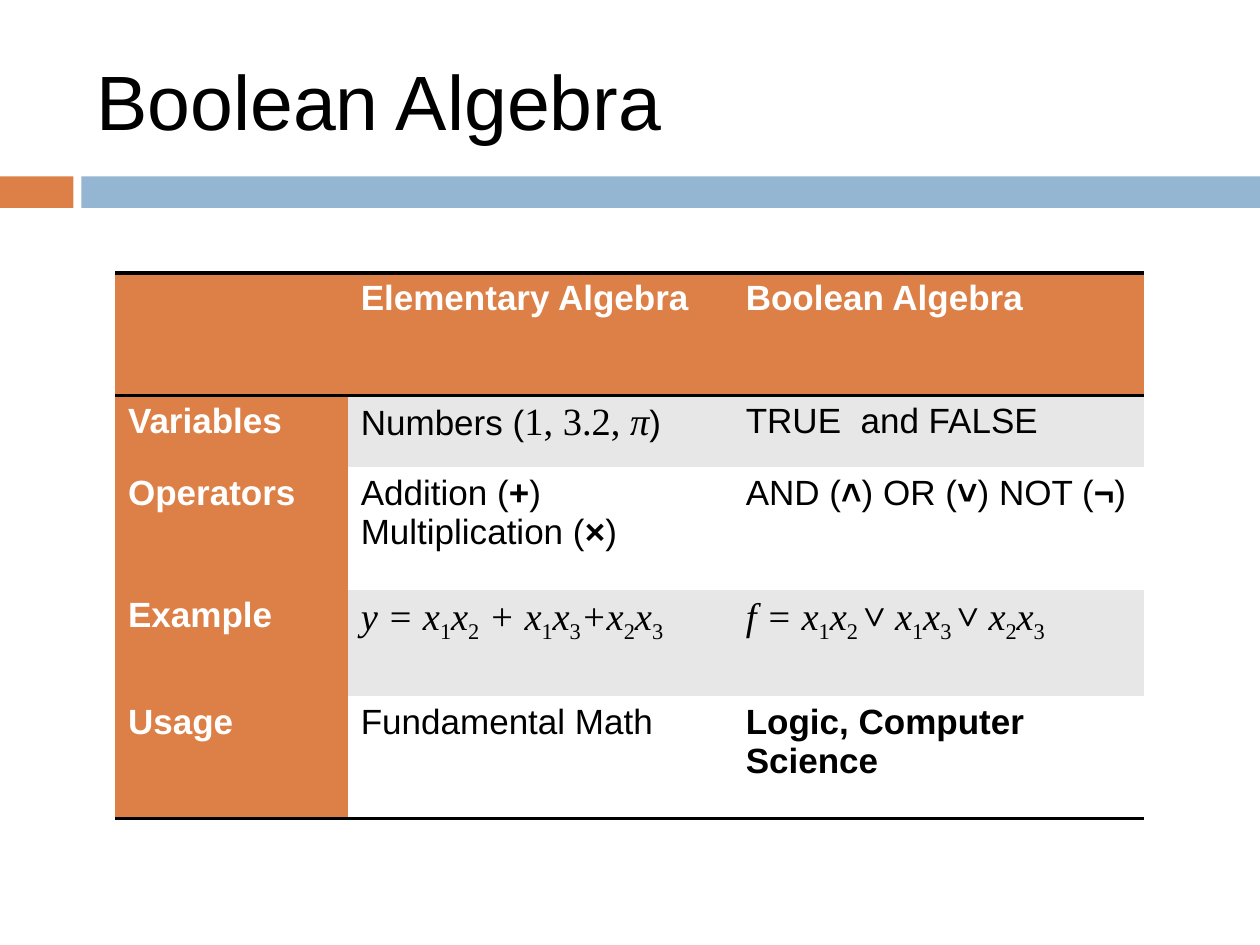
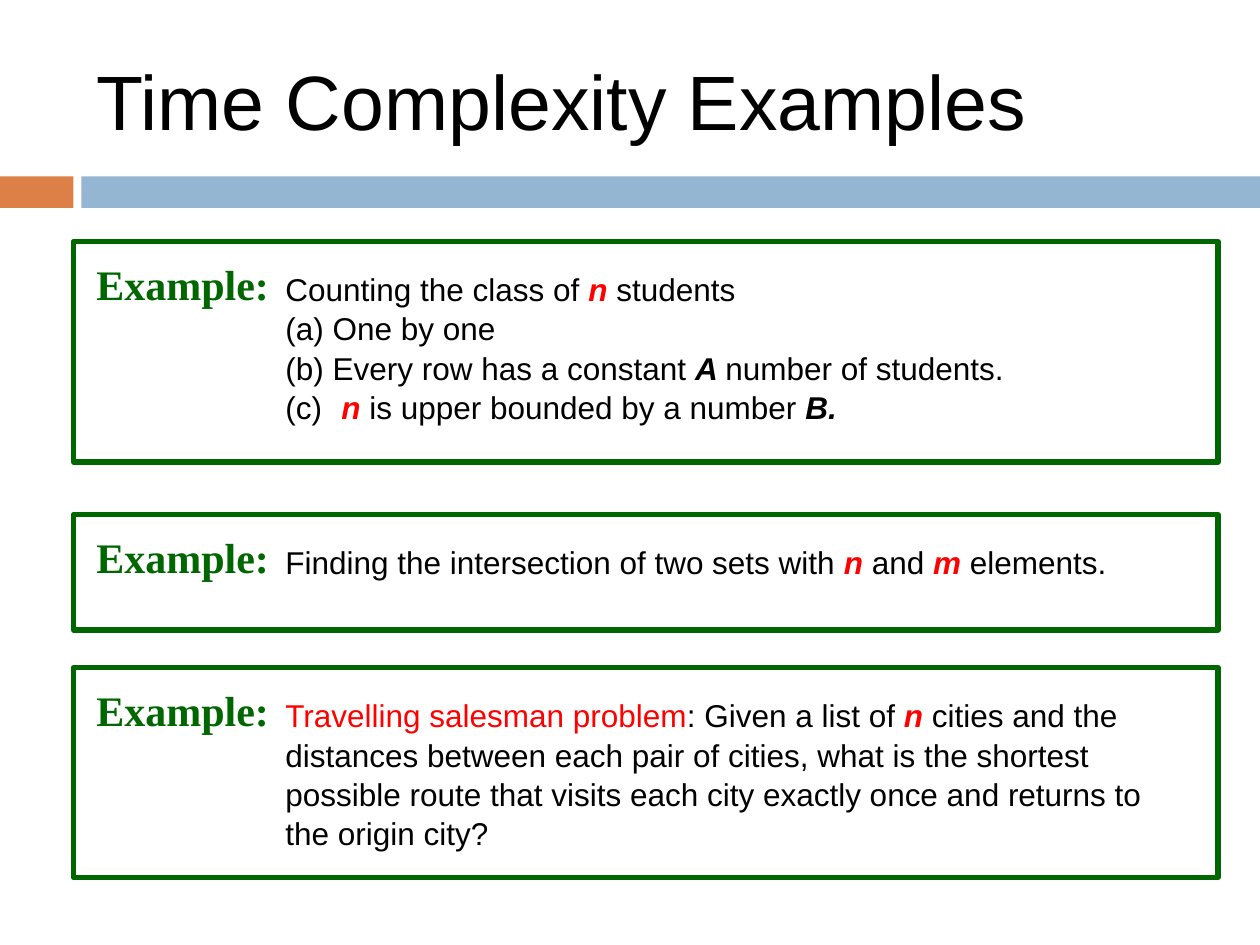
from lxml import etree
from pptx import Presentation
from pptx.dml.color import RGBColor
from pptx.enum.shapes import MSO_SHAPE
from pptx.enum.text import MSO_ANCHOR
from pptx.oxml.ns import qn
from pptx.util import Pt

RECT = MSO_SHAPE.RECTANGLE
TOP, MIDDLE = MSO_ANCHOR.TOP, MSO_ANCHOR.MIDDLE
PLAIN_GRID = "{2D5ABB26-0587-4C30-8999-92F81FD0307C}"

COLORS = {
    "black": "000000", "white": "FFFFFF", "red": "FF0000",
    "green": "006600", "orange": "DD8047", "blue": "94B6D2",
    "gray": "E7E7E7",
}

CELL = {"name": "Arial", "size": Pt(20)}
MATH = {"name": "Times New Roman", "size": Pt(22)}
BODY = {"name": "Arial", "size": Pt(18)}
FORMATS = {
    "title": {"name": "Arial", "size": Pt(44)},
    "label": {"name": "Times New Roman", "size": Pt(24), "bold": True, "color": "green"},
    "head": {**CELL, "bold": True, "color": "white"},
    "cell": CELL,
    "strong": {**CELL, "bold": True},
    "num": MATH,
    "math": {**MATH, "italic": True},
    "or": {**MATH, "bold": True},
    "sub": {**MATH, "base": "-25000"},
    "body": BODY,
    "red": {**BODY, "color": "red"},
    "var": {**BODY, "bold": True, "italic": True, "color": "red"},
    "const": {**BODY, "bold": True, "italic": True},
}

HEADS = ["", "Elementary Algebra", "Boolean Algebra"]
ROWS = [
    ["Variables", "Numbers (|num^1, 3.2, |math^π|)", "TRUE  and FALSE"],
    ["Operators", "Addition (|strong^+|) Multiplication (|strong^×|)",
     "AND (|strong^˄|) OR (|strong^˅|) NOT (|strong^¬|)"],
    ["Example",
     "math^y = x|sub^1|math^x|sub^2|math^ + x|sub^1|math^x|sub^3|math^+x|sub^2|math^x|sub^3",
     "math^f = x|sub^1|math^x|sub^2 |or^˅|math^ x|sub^1|math^x|sub^3 |or^˅ |math^x|sub^2|math^x|sub^3"],
    ["Usage", "Fundamental Math", "strong^Logic, Computer Science"],
]
WIDTHS = [133, 220, 235]
HEIGHTS = [70, 41, 70, 61, 70]

EXAMPLES = [
    (138, 126, 444, ["Counting the class of |var^n |students",
                     "One by one",
                     "Every row has a constant |const^A |number of students.",
                     " |var^n |is upper bounded by a number |const^B."]),
    (294, 66, 516, ["Finding the intersection of two sets with |var^n |and |var^m |elements."]),
    (381.5, 120, 516, ["red^Travelling salesman problem|: Given a list of |var^n |cities and the "
                       "distances between each pair of cities, what is the shortest possible "
                       "route that visits each city exactly once and returns to the origin city?"]),
]


def rgb(color):
    return RGBColor.from_string(COLORS[color])


class Deck:
    def __init__(self):
        self.prs = Presentation()
        self.prs.slide_width, self.prs.slide_height = Pt(720), Pt(540)
        self.slide = None

    def page(self, title):
        self.slide = self.prs.slides.add_slide(self.prs.slide_layouts[6])
        self.rect(0, 100.8, 42, 18, fill="orange")
        self.rect(46.5, 100.8, 673.5, 18, fill="blue")
        self.text(48, 18, 642, 78, [title], "title", MIDDLE)

    def rect(self, x, y, w, h, fill=None, line=None):
        shape = self.slide.shapes.add_shape(RECT, Pt(x), Pt(y), Pt(w), Pt(h))
        shape.shadow.inherit = False
        if fill:
            shape.fill.solid()
            shape.fill.fore_color.rgb = rgb(fill)
        else:
            shape.fill.background()
        if line:
            shape.line.color.rgb = rgb(line)
            shape.line.width = Pt(3)
        else:
            shape.line.fill.background()

    def runs(self, para, markup, base):
        for part in markup.split("|"):
            style, mark, text = part.rpartition("^")
            run = para.add_run()
            run.text = text
            look = {"bold": False, "italic": False, "color": "black",
                    **FORMATS[style if mark else base]}
            run.font.color.rgb = rgb(look.pop("color"))
            shift = look.pop("base", None)
            if shift:
                run._r.get_or_add_rPr().set("baseline", shift)
            for key, value in look.items():
                setattr(run.font, key, value)

    def text(self, x, y, w, h, lines, style, anchor=TOP, spacing=None):
        box = self.slide.shapes.add_textbox(Pt(x), Pt(y), Pt(w), Pt(h))
        frame = box.text_frame
        frame.word_wrap = True
        frame.vertical_anchor = anchor
        for i, line in enumerate(lines):
            para = frame.add_paragraph() if i else frame.paragraphs[0]
            para.line_spacing = spacing
            self.runs(para, line, style)
            if i:
                self.letter(para)

    def letter(self, para):
        props = para._p.get_or_add_pPr()
        props.set("marL", str(Pt(27)))
        props.set("indent", str(-Pt(27)))
        etree.SubElement(props, qn("a:buFont"), typeface="+mj-lt")
        etree.SubElement(props, qn("a:buAutoNum"), type="alphaLcParenBoth")

    def border(self, cell, sides):
        props = cell._tc.get_or_add_tcPr()
        for i, side in enumerate(sides):
            edge = etree.Element(qn("a:" + side), w=str(Pt(2)))
            fill = etree.SubElement(edge, qn("a:solidFill"))
            etree.SubElement(fill, qn("a:srgbClr"), val=COLORS["black"])
            props.insert(i, edge)

    def table(self, x, y, widths, heights, rows):
        frame = self.slide.shapes.add_table(
            len(rows), len(widths), Pt(x), Pt(y), Pt(sum(widths)), Pt(sum(heights)))
        table = frame.table
        table._tbl.tblPr.find(qn("a:tableStyleId")).text = PLAIN_GRID
        for col, width in zip(table.columns, widths):
            col.width = Pt(width)
        for r, row in enumerate(rows):
            table.rows[r].height = Pt(heights[r])
            for c, markup in enumerate(row):
                cell = table.cell(r, c)
                head = r == 0 or c == 0
                cell.fill.solid()
                cell.fill.fore_color.rgb = rgb(
                    "orange" if head else "gray" if r % 2 else "white")
                if markup:
                    self.runs(cell.text_frame.paragraphs[0], markup,
                              "head" if head else "cell")
                if r == 0:
                    self.border(cell, ["lnT", "lnB"])
                elif r == len(rows) - 1:
                    self.border(cell, ["lnB"])

    def example(self, top, height, width, lines):
        self.rect(42, top, 654, height, line="green")
        self.text(48, top + 6, 114, 36, ["Example:"], "label")
        self.text(156, top + 12, width, height - 18, lines, "body", spacing=1.04)


def main():
    deck = Deck()
    deck.page("Boolean Algebra")
    deck.table(66, 156, WIDTHS, HEIGHTS, [HEADS] + ROWS)
    deck.page("Time Complexity Examples")
    for item in EXAMPLES:
        deck.example(*item)
    deck.prs.save("out.pptx")


if __name__ == "__main__":
    main()
